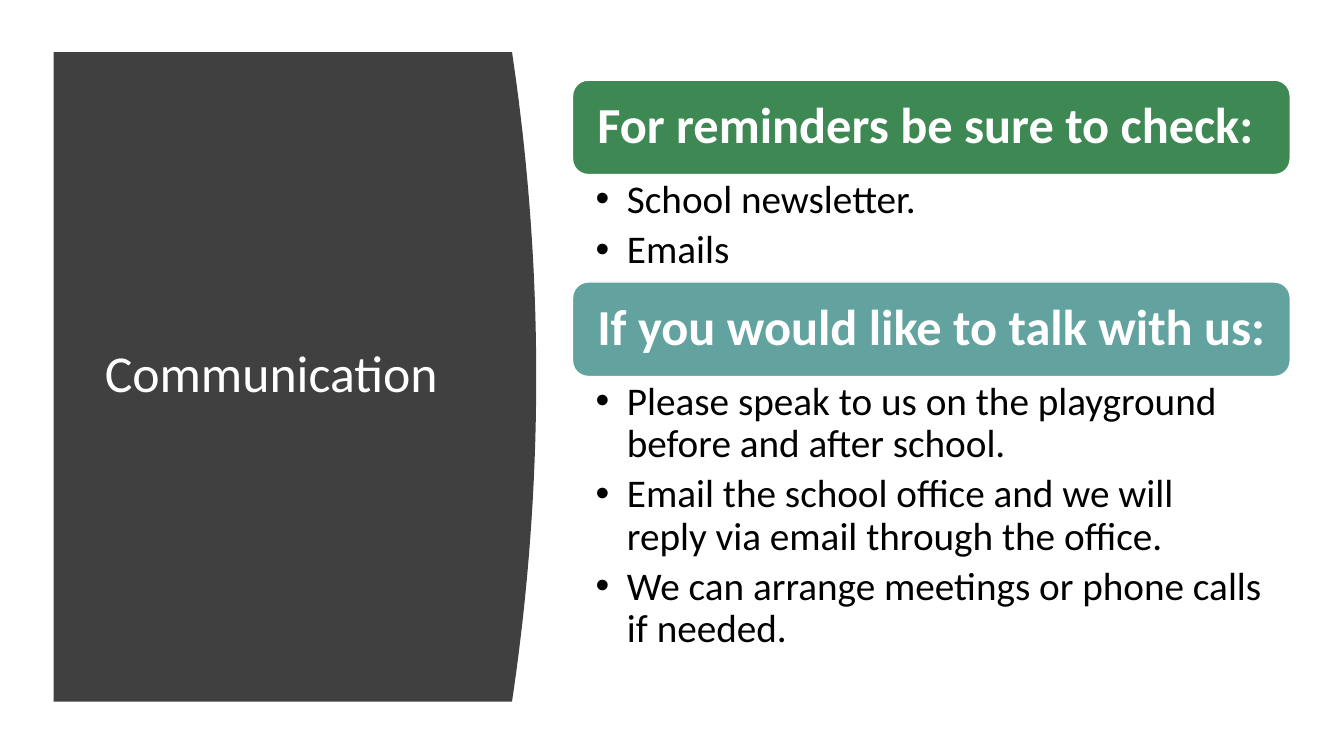
from dataclasses import dataclass

from lxml.etree import SubElement
from pptx import Presentation
from pptx.dml.color import RGBColor
from pptx.enum.shapes import MSO_SHAPE
from pptx.enum.text import MSO_ANCHOR, MSO_AUTO_SIZE, PP_ALIGN
from pptx.oxml.ns import qn
from pptx.util import Emu, Inches, Pt

SLIDE_WIDTH, SLIDE_HEIGHT = Inches(13.33), Inches(7.5)


@dataclass(frozen=True)
class Theme:
    font: str = "Calibri"
    panel: RGBColor = RGBColor(0x40, 0x40, 0x40)
    green: RGBColor = RGBColor(0x3E, 0x88, 0x53)
    teal: RGBColor = RGBColor(0x62, 0xA3, 0x9F)
    light: RGBColor = RGBColor(0xFF, 0xFF, 0xFF)
    dark: RGBColor = RGBColor(0, 0, 0)
    title_size: int = 37
    heading_size: int = 36
    bullet_size: int = 28
    line_spacing: float = 0.9
    bullet_gap: float = 5.6


THEME = Theme()

# Content column, in percent of the slide's width and height
CONTENT_LEFT, CONTENT_WIDTH = 42.6, 53.4
CONTENT_TOP, HEADING_HEIGHT = 10.6, 12.5

# Heading, heading colour, height of the bullet area, bullets
SECTIONS = [
    ("For reminders be sure to check:", THEME.green, 14.2,
     ["School newsletter.", "Emails"]),
    ("If you would like to talk with us:", THEME.teal, 39.1,
     ["Please speak to us on the playground before and after school.",
      "Email the school office and we will reply via email through the office.",
      "We can arrange meetings or phone calls if needed."]),
]


def across(percent):
    return Emu(round(SLIDE_WIDTH * percent / 100))


def down(percent):
    return Emu(round(SLIDE_HEIGHT * percent / 100))


def area(left, top, width, height):
    return across(left), down(top), across(width), down(height)


def set_frame(frame, anchor, left, top, right, bottom):
    frame.word_wrap = True
    frame.auto_size = MSO_AUTO_SIZE.NONE
    frame.vertical_anchor = anchor
    frame.margin_left, frame.margin_top = Inches(left), Inches(top)
    frame.margin_right, frame.margin_bottom = Inches(right), Inches(bottom)


def format_paragraph(paragraph, size, color, bold=False):
    paragraph.alignment = PP_ALIGN.LEFT
    paragraph.line_spacing = THEME.line_spacing
    for run in paragraph.runs:
        run.font.name = THEME.font
        run.font.size = Pt(size)
        run.font.bold = bold
        run.font.color.rgb = color


def add_bullet(paragraph):
    properties = paragraph._p.get_or_add_pPr()
    properties.set("marL", str(Inches(0.31)))
    properties.set("indent", str(-Inches(0.31)))
    SubElement(properties, qn("a:buFont")).set("typeface", "Arial")
    SubElement(properties, qn("a:buChar")).set("char", "•")


def add_panel(slide, left, top, right, bottom, bulge, steps=40):
    """Dark panel whose right edge bows outwards along a parabola."""
    edge = []
    for step in range(steps + 1):
        share = step / steps
        bow = 4 * bulge * share * (1 - share)
        edge.append((across(right + bow), down(top + (bottom - top) * share)))
    outline = slide.shapes.build_freeform(across(left), down(top))
    outline.add_line_segments(edge + [(across(left), down(bottom))])
    panel = outline.convert_to_shape()
    panel.shadow.inherit = False
    panel.fill.solid()
    panel.fill.fore_color.rgb = THEME.panel
    panel.line.fill.background()
    # The panel lies behind the title
    slide.shapes.title._element.addprevious(panel._element)


def set_title(slide, wording, box):
    title = slide.shapes.title
    title.left, title.top, title.width, title.height = box
    title.text_frame.text = wording
    set_frame(title.text_frame, MSO_ANCHOR.MIDDLE, 0.1, 0.05, 0.1, 0.05)
    format_paragraph(title.text_frame.paragraphs[0], THEME.title_size, THEME.light)


def add_heading(slide, wording, color, box):
    heading = slide.shapes.add_shape(MSO_SHAPE.ROUNDED_RECTANGLE, *box)
    heading.shadow.inherit = False
    heading.fill.solid()
    heading.fill.fore_color.rgb = color
    heading.line.color.rgb = THEME.light
    heading.line.width = Pt(1)
    heading.text_frame.text = wording
    set_frame(heading.text_frame, MSO_ANCHOR.MIDDLE, 0.2, 0.15, 0.15, 0.15)
    format_paragraph(heading.text_frame.paragraphs[0], THEME.heading_size,
                     THEME.light, bold=True)


def add_bullets(slide, bullets, box):
    frame = slide.shapes.add_textbox(*box).text_frame
    frame.text = "\n".join(bullets)
    set_frame(frame, MSO_ANCHOR.TOP, 0.23, 0.05, 0.28, 0.05)
    for paragraph in frame.paragraphs:
        format_paragraph(paragraph, THEME.bullet_size, THEME.dark)
        paragraph.space_after = Pt(THEME.bullet_gap)
        add_bullet(paragraph)


def main():
    presentation = Presentation()
    presentation.slide_width, presentation.slide_height = SLIDE_WIDTH, SLIDE_HEIGHT
    title_only = presentation.slide_layouts.get_by_name("Title Only")
    slide = presentation.slides.add_slide(title_only)

    # Title panel
    add_panel(slide, left=4, top=6.9, right=38.1, bottom=92.8, bulge=1.8)
    set_title(slide, "Communication", area(7.05, 14.8, 28.05, 69.9))

    # Sections, stacked from the top
    top = CONTENT_TOP
    for heading, color, bullets_height, bullets in SECTIONS:
        add_heading(slide, heading, color,
                    area(CONTENT_LEFT, top, CONTENT_WIDTH, HEADING_HEIGHT))
        top += HEADING_HEIGHT
        add_bullets(slide, bullets,
                    area(CONTENT_LEFT, top, CONTENT_WIDTH, bullets_height))
        top += bullets_height

    presentation.save("out.pptx")


if __name__ == "__main__":
    main()
